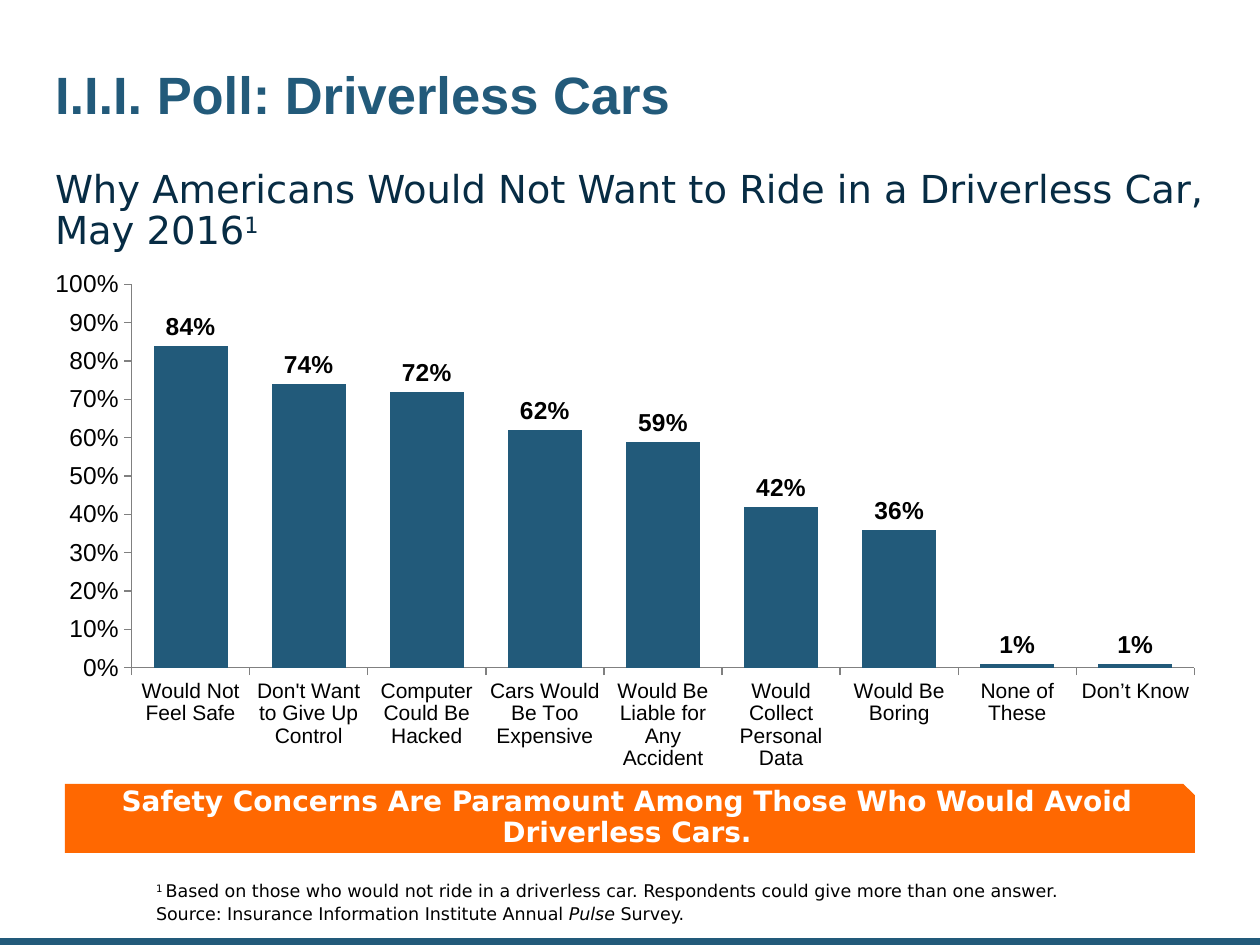
from lxml.etree import SubElement
from pptx import Presentation
from pptx.chart.data import CategoryChartData
from pptx.dml.color import RGBColor
from pptx.enum.chart import XL_CHART_TYPE, XL_LABEL_POSITION, XL_TICK_MARK
from pptx.enum.shapes import MSO_SHAPE
from pptx.enum.text import MSO_ANCHOR, MSO_AUTO_SIZE, PP_ALIGN
from pptx.oxml.ns import qn
from pptx.util import Emu, Pt

SCALE = 914400 / 126
COLORS = {"blue": "225A7A", "navy": "072C44", "orange": "FF6801",
          "gray": "808080", "black": "000000", "white": "FFFFFF"}
SANS = "DejaVu Sans"
REASONS = [
    ("Would Not\nFeel Safe", 0.84),
    ("Don't Want\nto Give Up\nControl", 0.74),
    ("Computer\nCould Be\nHacked", 0.72),
    ("Cars Would\nBe Too\nExpensive", 0.62),
    ("Would Be\nLiable for\nAny Accident", 0.59),
    ("Would\nCollect\nPersonal\nData", 0.42),
    ("Would Be\nBoring", 0.36),
    ("None of\nThese", 0.01),
    ("Don’t Know", 0.01),
]


def px(n):
    return Emu(round(n * SCALE))


def color(name):
    return RGBColor.from_string(COLORS[name])


def paint(fill, name):
    fill.solid()
    fill.fore_color.rgb = color(name)


def style(font, face, size, tint, bold=False):
    font.name, font.size, font.bold = face, Pt(size), bold
    font.color.rgb = color(tint)


def place(shape, box):
    shape.left, shape.top, shape.width, shape.height = map(px, box)


def write(shape, lines, look, anchor, pads, align=PP_ALIGN.LEFT, gap=0):
    """Fill a shape with lines; each line is a list of (text, kind) runs."""
    frame = shape.text_frame
    frame.word_wrap = True
    frame.auto_size = MSO_AUTO_SIZE.NONE
    frame.vertical_anchor = anchor
    (frame.margin_left, frame.margin_top,
     frame.margin_right, frame.margin_bottom) = map(px, pads)
    for i, line in enumerate(lines):
        para = frame.add_paragraph() if i else frame.paragraphs[0]
        para.alignment = align
        para.line_spacing = 0.9
        para.space_before = Pt(gap if i else 0)
        style(para.font, *look)
        for text, kind in line:
            run = para.add_run()
            run.text = text
            if kind == "super":
                run._r.get_or_add_rPr().set("baseline", "30000")
            elif kind == "italic":
                run.font.italic = True


def add_bar(slide, kind, box, tint):
    bar = slide.shapes.add_shape(kind, *map(px, box))
    bar.shadow.inherit = False
    paint(bar.fill, tint)
    bar.line.fill.background()
    return bar


def set_plot(chart, box):
    """Fix the inner plot area, as fractions of the chart."""
    area = chart._chartSpace.chart.plotArea
    old = area.find(qn("c:layout"))
    if old is not None:
        area.remove(old)
    layout = SubElement(area, qn("c:layout"))
    area.insert(0, layout)
    manual = SubElement(layout, qn("c:manualLayout"))
    parts = [("layoutTarget", "inner"), ("xMode", "edge"), ("yMode", "edge")]
    for tag, val in parts + list(zip("xywh", box)):
        SubElement(manual, qn("c:" + tag)).set("val", str(val))


def set_axis(axis, size):
    axis.has_major_gridlines = False
    axis.major_tick_mark = XL_TICK_MARK.OUTSIDE
    axis.minor_tick_mark = XL_TICK_MARK.NONE
    axis.format.line.width = Pt(0.75)
    axis.format.line.color.rgb = color("gray")
    style(axis.tick_labels.font, "Arial", size, "black")


def add_columns(slide, box):
    data = CategoryChartData(number_format="0%")
    data.categories = [name for name, _ in REASONS]
    data.add_series("Series 1", [share for _, share in REASONS])
    chart = slide.shapes.add_chart(
        XL_CHART_TYPE.COLUMN_CLUSTERED, *map(px, box), data).chart
    chart.has_legend = chart.has_title = False
    style(chart.font, "Arial", 13.3, "black")
    set_plot(chart, (0.10, 0.10, 0.86, 0.68))
    set_axis(chart.category_axis, 12)
    scale = chart.value_axis
    set_axis(scale, 14)
    scale.minimum_scale, scale.maximum_scale, scale.major_unit = 0, 1, 0.1
    scale.tick_labels.number_format = "0%"
    scale.tick_labels.number_format_is_linked = False
    plot = chart.plots[0]
    plot.gap_width = 60
    plot.vary_by_categories = False
    paint(plot.series[0].format.fill, "blue")
    plot.has_data_labels = True
    labels = plot.data_labels
    labels.show_value = True
    labels.number_format = "0%"
    labels.number_format_is_linked = False
    labels.position = XL_LABEL_POSITION.OUTSIDE_END
    style(labels.font, "Arial", 14, "black", True)


def main():
    deck = Presentation()
    deck.slide_width, deck.slide_height = px(1260), px(945)
    slide = deck.slides.add_slide(deck.slide_layouts[4])
    holes = {hole.placeholder_format.idx: hole for hole in slide.placeholders}
    for spare in (2, 4):
        holes[spare]._element.getparent().remove(holes[spare]._element)
    title, lead, note = holes[0], holes[1], holes[3]
    pads = (6, 6, 6, 6)

    add_bar(slide, MSO_SHAPE.RECTANGLE, (0, 938, 1260, 7), "blue")

    place(title, (49, 32, 1166, 131))
    write(title, [[("I.I.I. Poll: Driverless Cars", "")]],
          ("Arial", 30, "blue", True), MSO_ANCHOR.MIDDLE, pads)

    place(lead, (49, 164, 1194, 54))
    write(lead,
          [[("Why Americans Would Not Want to Ride in a Driverless Car,", "")],
           [("May 2016", ""), ("1", "super")]],
          (SANS, 22, "navy"), MSO_ANCHOR.TOP, pads)

    place(note, (156, 867, 1058, 57))
    write(note,
          [[("1 ", "super"),
            ("Based on those who would not ride in a driverless car. "
             "Respondents could give more than one answer.", "")],
           [("Source: Insurance Information Institute Annual ", ""),
            ("Pulse", "italic"), (" Survey.", "")]],
          (SANS, 10, "black"), MSO_ANCHOR.BOTTOM, (0, 0, 0, 0), gap=2)

    add_columns(slide, (8, 228, 1236, 564))

    banner = add_bar(slide, MSO_SHAPE.SNIP_1_RECTANGLE,
                     (65, 784, 1130, 69), "orange")
    write(banner,
          [[("Safety Concerns Are Paramount Among Those Who Would Avoid "
             "Driverless Cars.", "")]],
          (SANS, 16, "white", True), MSO_ANCHOR.MIDDLE, (13, 6, 13, 13),
          PP_ALIGN.CENTER)

    deck.save("out.pptx")


if __name__ == "__main__":
    main()
